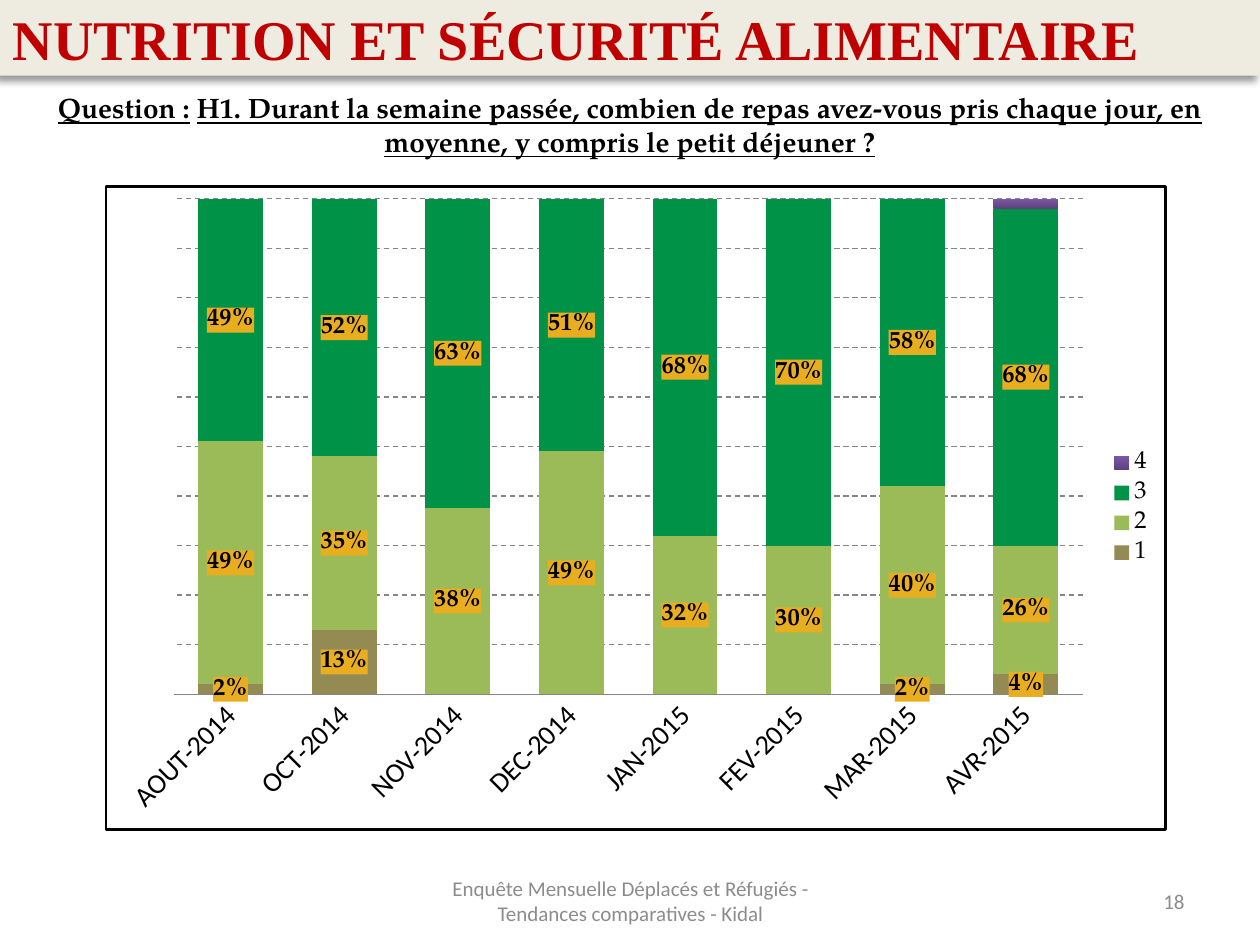
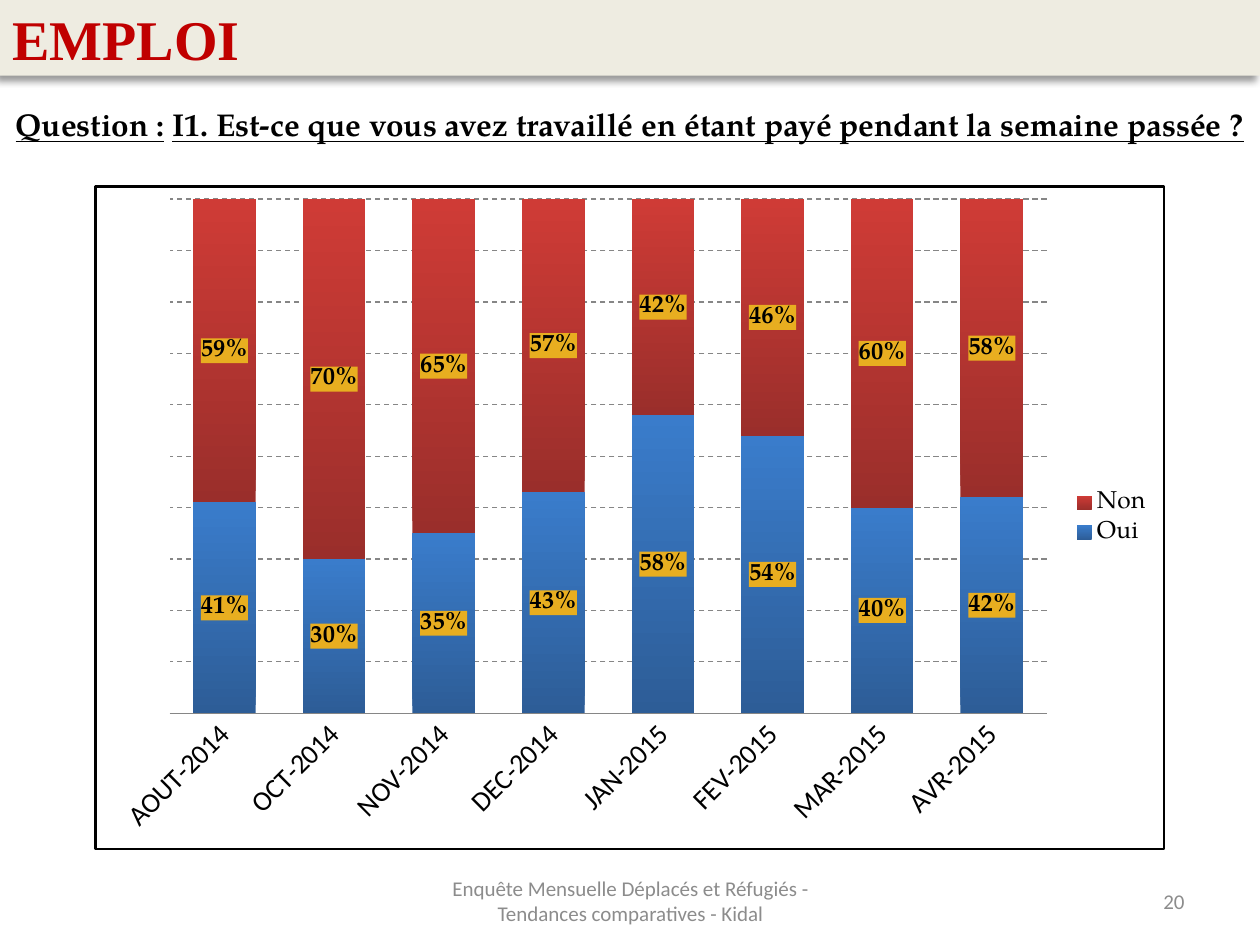
import dataclasses

import pptx
import pptx.chart.data
import pptx.dml.color
import pptx.enum.chart
import pptx.enum.dml
import pptx.enum.text
import pptx.oxml
import pptx.oxml.ns
import pptx.util

qn = pptx.oxml.ns.qn
ALIGN = pptx.enum.text.PP_ALIGN
ANCHOR = pptx.enum.text.MSO_ANCHOR
NS = pptx.oxml.ns.nsdecls("a", "c")

FOOTER = "Enquête Mensuelle Déplacés et Réfugiés - Tendances comparatives - Kidal"
MONTHS = ["AOUT-2014", "OCT-2014", "NOV-2014", "DEC-2014",
          "JAN-2015", "FEV-2015", "MAR-2015", "AVR-2015"]


@dataclasses.dataclass(frozen=True)
class Theme:
    ink: str = "000000"
    title: str = "C00000"
    band: str = "EEECE1"
    muted: str = "8C8C8C"
    grid: str = "868686"
    label: str = "E8AE20"
    body_font: str = "Calibri"
    title_font: str = "Times New Roman"
    accent_font: str = "TeX Gyre Pagella"
    title_size: int = 32
    axis_size: int = 16
    label_size: int = 14
    footer_size: int = 12
    chart_size: int = 10


def rgb(value):
    return pptx.dml.color.RGBColor.from_string(value)


def style(font, name, size, color, bold=False):
    font.name = name
    font.size = pptx.util.Pt(size)
    font.color.rgb = rgb(color)
    font.bold = bold


def xml(text):
    return pptx.oxml.parse_xml(text)


class Deck:
    def __init__(self, theme):
        self.theme = theme
        self.prs = pptx.Presentation()
        self.prs.slide_width = pptx.util.Inches(10)
        self.prs.slide_height = pptx.util.Inches(7.5)
        self.s = None

    def box(self, left, top, width, height):
        w, h = self.prs.slide_width, self.prs.slide_height
        return [round(share * side / 100)
                for share, side in ((left, w), (top, h), (width, w), (height, h))]

    def slide(self, title, number):
        t = self.theme
        self.s = self.prs.slides.add_slide(self.prs.slide_layouts[5])
        self.title(title)
        small = (t.body_font, t.footer_size, t.muted)
        self.text([(FOOTER, False)], (34.2, 92.7, 31.7, 5.3), ALIGN.CENTER, *small)
        self.text([(str(number), False)], (71.7, 92.7, 23.3, 5.3), ALIGN.RIGHT, *small)

    def title(self, text):
        t = self.theme
        sp = self.s.shapes.title
        sp.left, sp.top, sp.width, sp.height = self.box(0, 0, 100, 8)
        sp.fill.solid()
        sp.fill.fore_color.rgb = rgb(t.band)
        sp._element.spPr.append(xml(
            f'<a:effectLst {NS}><a:outerShdw blurRad="50800" dist="50800" dir="8100000">'
            f'<a:srgbClr val="{t.ink}"><a:alpha val="40000"/></a:srgbClr>'
            '</a:outerShdw></a:effectLst>'))
        tf = sp.text_frame
        tf.auto_size = pptx.enum.text.MSO_AUTO_SIZE.NONE
        tf.vertical_anchor = ANCHOR.MIDDLE
        p = tf.paragraphs[0]
        p.text = text
        p.alignment = ALIGN.LEFT
        style(p.font, t.title_font, t.title_size, t.title, True)

    def text(self, runs, area, align, font, size, color, bold=False):
        tf = self.s.shapes.add_textbox(*self.box(*area)).text_frame
        tf.word_wrap = True
        tf.vertical_anchor = ANCHOR.MIDDLE
        p = tf.paragraphs[0]
        p.alignment = align
        style(p.font, font, size, color, bold)
        for text, underline in runs:
            r = p.add_run()
            r.text = text
            if underline:
                r.font.underline = True

    def question(self, text, area, size):
        runs = [("Question :", True), (" ", False), (text, True)]
        self.text(runs, area, ALIGN.CENTER, self.theme.accent_font, size,
                  self.theme.ink, True)

    def chart(self, area, plot_area, series):
        t = self.theme
        data = pptx.chart.data.CategoryChartData(number_format="0%")
        data.categories = MONTHS
        for name, values, *_ in series:
            data.add_series(name, values)
        kind = pptx.enum.chart.XL_CHART_TYPE.COLUMN_STACKED_100
        chart = self.s.shapes.add_chart(kind, *self.box(*area), data).chart
        style(chart.font, t.body_font, t.chart_size, t.ink)
        chart.has_title = False
        chart.has_legend = True
        chart.legend.position = pptx.enum.chart.XL_LEGEND_POSITION.RIGHT
        chart.legend.include_in_layout = False
        style(chart.legend.font, t.accent_font, t.label_size, t.ink)
        self.axes(chart)
        self.frame(chart, plot_area)
        plot = chart.plots[0]
        plot.gap_width = 75
        plot.overlap = 100
        plot.vary_by_categories = False
        for ser, (_, values, colors, labelled) in zip(plot.series, series):
            self.paint(ser.format.fill, colors)
            if labelled:
                self.labels(ser, values)

    def axes(self, chart):
        t = self.theme
        cat, val = chart.category_axis, chart.value_axis
        cat.major_tick_mark = pptx.enum.chart.XL_TICK_MARK.NONE
        cat.format.line.color.rgb = rgb(t.grid)
        style(cat.tick_labels.font, t.body_font, t.axis_size, t.ink)
        cat._element.find(qn("c:txPr")).find(qn("a:bodyPr")).set("rot", "-2700000")
        val.visible = False
        val.minimum_scale, val.maximum_scale, val.major_unit = 0, 1, 0.1
        val.has_major_gridlines = True
        line = val.major_gridlines.format.line
        line.color.rgb = rgb(t.grid)
        line.width = pptx.util.Pt(0.75)
        line.dash_style = pptx.enum.dml.MSO_LINE.DASH

    def frame(self, chart, plot_area):
        root = chart._chartSpace.find(qn("c:chart"))
        root.addnext(xml(
            f'<c:spPr {NS}><a:noFill/><a:ln w="19050"><a:solidFill>'
            f'<a:srgbClr val="{self.theme.ink}"/></a:solidFill></a:ln></c:spPr>'))
        area = root.find(qn("c:plotArea"))
        for layout in area.findall(qn("c:layout")):
            area.remove(layout)
        sizes = "".join(f'<c:{key} val="{share / 100:.3f}"/>'
                        for key, share in zip("xywh", plot_area))
        area.insert(0, xml(
            f'<c:layout {NS}><c:manualLayout><c:layoutTarget val="inner"/>'
            f'<c:xMode val="edge"/><c:yMode val="edge"/>{sizes}'
            '</c:manualLayout></c:layout>'))

    def paint(self, fill, colors):
        if len(colors) == 1:
            fill.solid()
            fill.fore_color.rgb = rgb(colors[0])
            return
        fill.gradient()
        fill.gradient_angle = 90
        for stop, color in zip(fill.gradient_stops, colors):
            stop.color.rgb = rgb(color)

    def labels(self, ser, values):
        t = self.theme
        labels = ser.data_labels
        labels.show_value = True
        labels.number_format = "0%"
        labels.number_format_is_linked = False
        style(labels.font, t.accent_font, t.label_size, t.ink, True)
        node = labels._element
        node.find(qn("c:numFmt")).addnext(xml(
            f'<c:spPr {NS}><a:solidFill><a:srgbClr val="{t.label}"/>'
            '</a:solidFill></c:spPr>'))
        empty = [i for i, value in enumerate(values) if not value]
        for place, i in enumerate(empty):
            node.insert(place, xml(
                f'<c:dLbl {NS}><c:idx val="{i}"/><c:delete val="1"/></c:dLbl>'))


def main():
    deck = Deck(Theme())

    deck.slide("NUTRITION ET SÉCURITÉ ALIMENTAIRE", 18)
    deck.question("H1. Durant la semaine passée, combien de repas avez-vous pris "
                  "chaque jour, en moyenne, y compris le petit déjeuner ?",
                  (0, 8.9, 100, 8.5), 16)
    deck.chart((8.3, 19.6, 84.3, 68.3), (6.4, 1.9, 85.8, 77.1), [
        ("1", [0.02, 0.13, 0, 0, 0, 0, 0.02, 0.04], ["948A54"], True),
        ("2", [0.49, 0.35, 0.38, 0.49, 0.32, 0.3, 0.4, 0.26], ["9BBB59"], True),
        ("3", [0.49, 0.52, 0.63, 0.51, 0.68, 0.7, 0.58, 0.68], ["009246"], True),
        ("4", [0, 0, 0, 0, 0, 0, 0, 0.02], ["5D417E", "7B58A6"], False),
    ])

    deck.slide("EMPLOI", 20)
    deck.question("I1. Est-ce que vous avez travaillé en étant payé pendant "
                  "la semaine passée ?", (0, 10.5, 100, 5.3), 18)
    deck.chart((7.5, 19.6, 85, 70.4), (6.9, 1.9, 82.1, 77.6), [
        ("Oui", [0.41, 0.3, 0.35, 0.43, 0.58, 0.54, 0.4, 0.42],
         ["2D5D97", "3A7CCB"], True),
        ("Non", [0.59, 0.7, 0.65, 0.57, 0.42, 0.46, 0.6, 0.58],
         ["9A2E2B", "CF3B36"], True),
    ])

    deck.prs.save("out.pptx")


if __name__ == "__main__":
    main()
